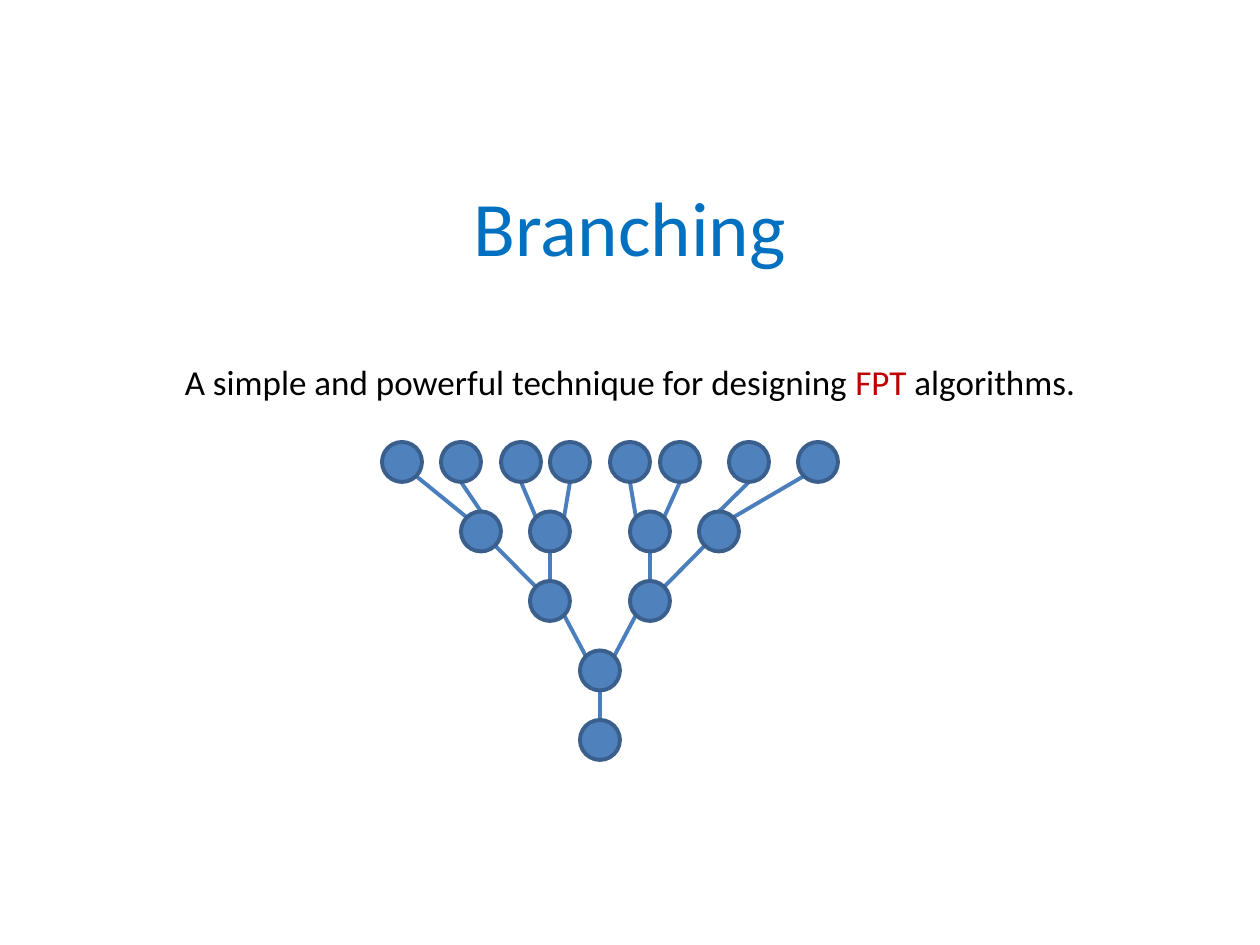
from lxml.etree import SubElement
from pptx import Presentation
from pptx.dml.color import RGBColor
from pptx.enum.shapes import MSO_CONNECTOR, MSO_SHAPE
from pptx.enum.text import MSO_ANCHOR, PP_ALIGN
from pptx.oxml.ns import qn
from pptx.util import Pt

TITLE_BLUE = RGBColor(0x00, 0x70, 0xC0)
BLACK = RGBColor(0x00, 0x00, 0x00)
RED = RGBColor(0xC0, 0x00, 0x00)
NODE_FILL = RGBColor(0x4F, 0x81, 0xBD)
NODE_LINE = RGBColor(0x3A, 0x5F, 0x8C)
EDGE_LINE = RGBColor(0x4B, 0x7E, 0xBC)

TITLE = [("Branching", TITLE_BLUE)]
SUBTITLE = [
    ("A simple and powerful technique for designing ", BLACK),
    ("FPT", RED),
    (" algorithms.", BLACK),
]

LEFT, CENTER, RIGHT = -1, 0, 1
# name: (x, level, parent, side of the parent, side of the node)
TREE = {
    "stem": (600, 0, None, CENTER, CENTER),
    "fork": (600, 1, "stem", CENTER, CENTER),
    "left": (550, 2, "fork", LEFT, RIGHT),
    "right": (650, 2, "fork", RIGHT, LEFT),
    "left inner": (550, 3, "left", CENTER, CENTER),
    "right inner": (650, 3, "right", CENTER, CENTER),
    "left outer": (481, 3, "left", LEFT, RIGHT),
    "right outer": (719, 3, "right", RIGHT, LEFT),
    "leaf 1": (402, 4, "left outer", LEFT, RIGHT),
    "leaf 2": (461, 4, "left outer", CENTER, CENTER),
    "leaf 3": (521, 4, "left inner", LEFT, CENTER),
    "leaf 4": (570, 4, "left inner", RIGHT, CENTER),
    "leaf 5": (630, 4, "right inner", LEFT, CENTER),
    "leaf 6": (680, 4, "right inner", RIGHT, CENTER),
    "leaf 7": (749, 4, "right outer", CENTER, CENTER),
    "leaf 8": (818, 4, "right outer", RIGHT, LEFT),
}
STEM_Y = 740
LEVEL_STEP = 69.5
RADIUS = 20
DIAGONAL = 14
UP, DOWN = -1, 1


def px(value):
    return round(value * 914400 / 126)


def node_center(name):
    x, level = TREE[name][:2]
    return x, STEM_Y - level * LEVEL_STEP


def edge_point(name, side, direction):
    x, y = node_center(name)
    rise = DIAGONAL if side else RADIUS
    return px(x + side * DIAGONAL), px(y + direction * rise)


def add_text(slide, box, pieces, size, anchor):
    shape = slide.shapes.add_textbox(*map(px, box))
    text_frame = shape.text_frame
    text_frame.word_wrap = True
    text_frame.vertical_anchor = anchor
    paragraph = text_frame.paragraphs[0]
    paragraph.alignment = PP_ALIGN.CENTER
    for text, color in pieces:
        run = paragraph.add_run()
        run.text = text
        run.font.name = "Calibri"
        run.font.size = Pt(size)
        run.font.color.rgb = color


def add_edge(slide, name):
    parent, parent_side, side = TREE[name][2:]
    start = edge_point(parent, parent_side, UP)
    end = edge_point(name, side, DOWN)
    connector = slide.shapes.add_connector(MSO_CONNECTOR.STRAIGHT, *start, *end)
    connector.line.color.rgb = EDGE_LINE
    connector.line.width = Pt(2.25)
    SubElement(connector.element.spPr, qn("a:effectLst"))


def add_node(slide, name):
    x, y = node_center(name)
    box = (x - RADIUS, y - RADIUS, 2 * RADIUS, 2 * RADIUS)
    shape = slide.shapes.add_shape(MSO_SHAPE.OVAL, *map(px, box))
    shape.shadow.inherit = False
    shape.fill.solid()
    shape.fill.fore_color.rgb = NODE_FILL
    shape.line.color.rgb = NODE_LINE
    shape.line.width = Pt(2.25)


def main():
    presentation = Presentation()
    presentation.slide_width = px(1260)
    presentation.slide_height = px(945)
    slide = presentation.slides.add_slide(presentation.slide_layouts[6])
    add_text(slide, (63, 147, 1134, 158), TITLE, 44, MSO_ANCHOR.MIDDLE)
    add_text(slide, (63, 354, 1134, 89), SUBTITLE, 20, MSO_ANCHOR.TOP)
    for name in TREE:
        if TREE[name][2]:
            add_edge(slide, name)
    for name in TREE:
        add_node(slide, name)
    presentation.save("out.pptx")


if __name__ == "__main__":
    main()
